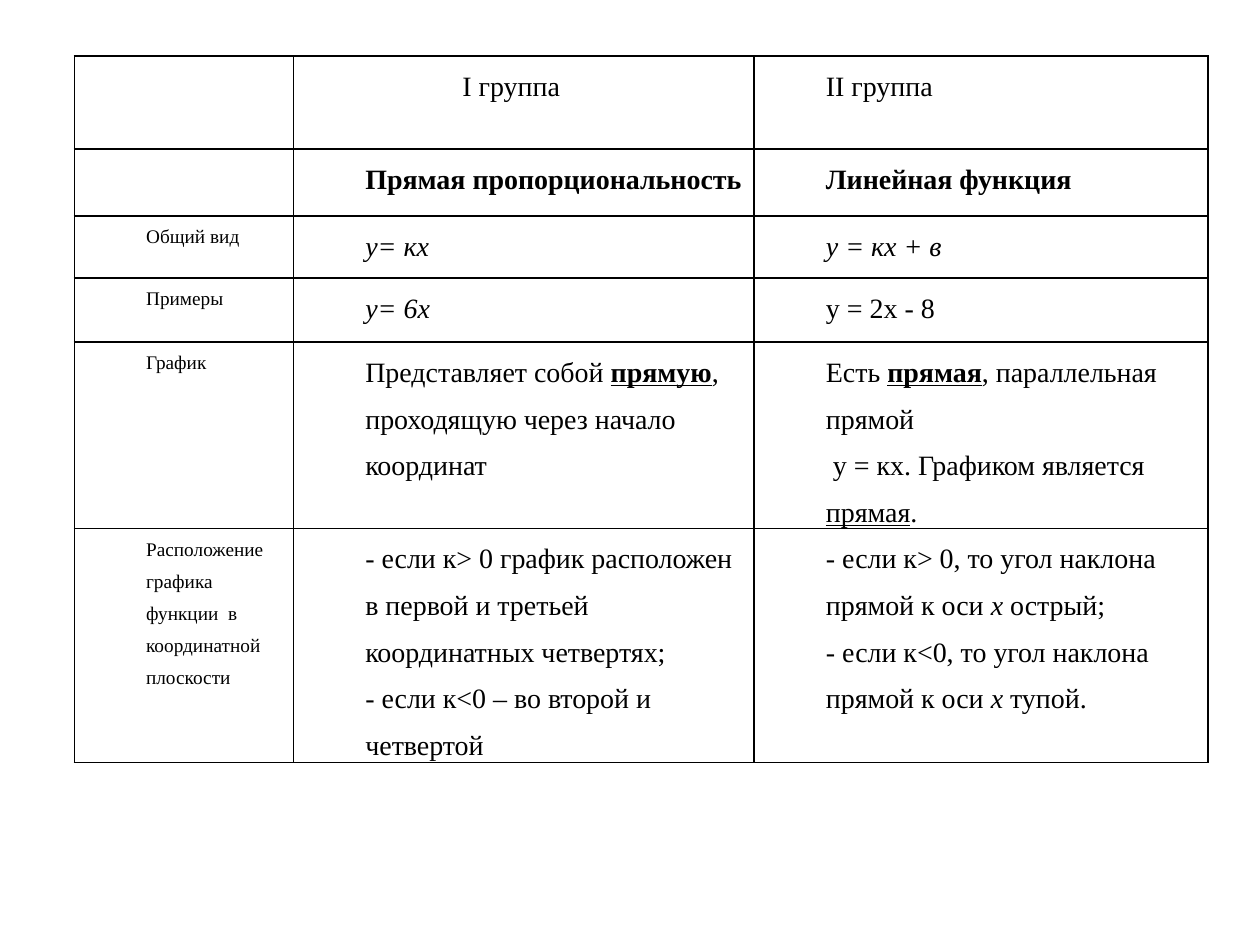
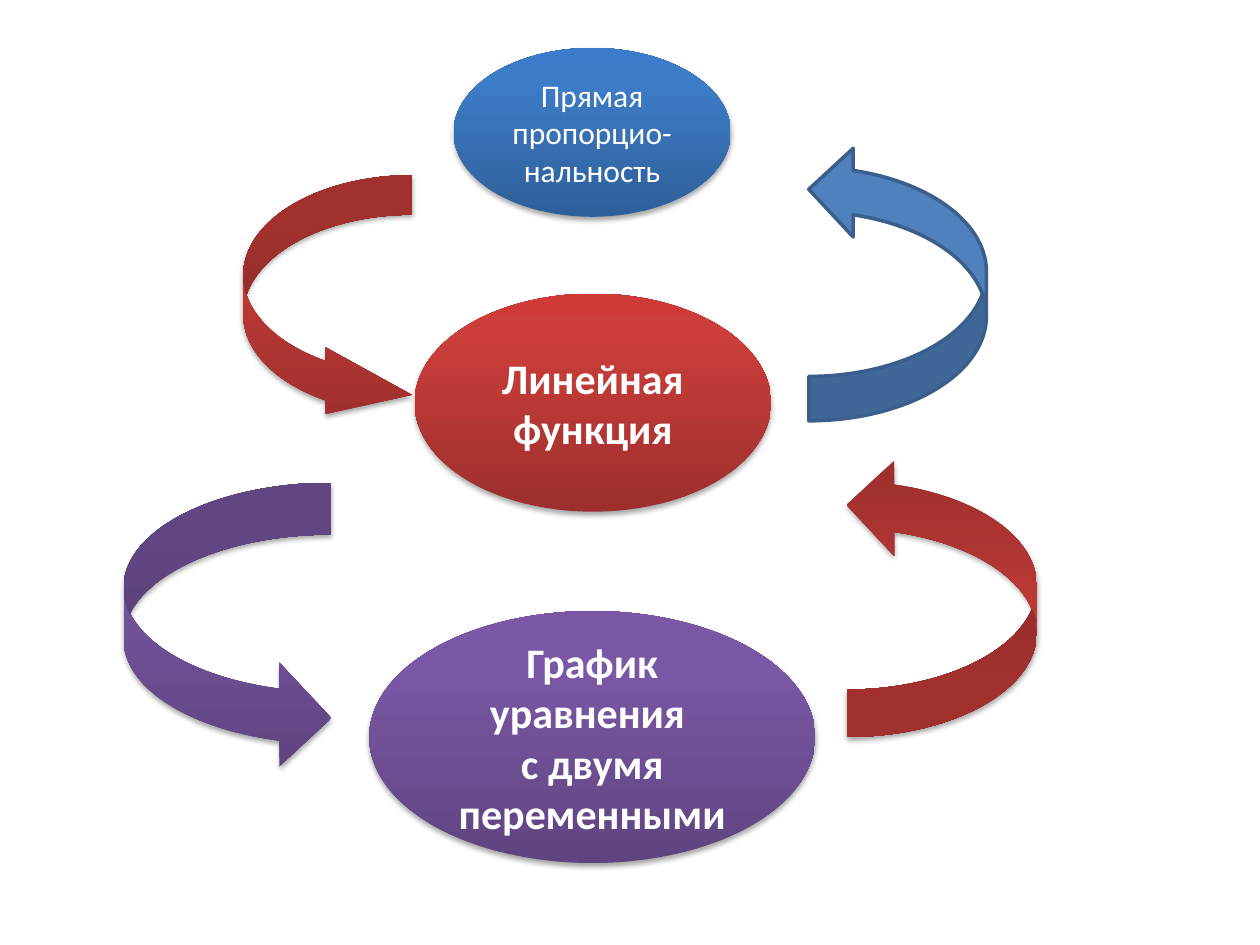
"""Build two slides: a comparison table of linear functions and a cycle of linked ovals."""
from copy import deepcopy

from lxml import etree
from pptx import Presentation
from pptx.dml.color import RGBColor
from pptx.enum.shapes import MSO_SHAPE
from pptx.enum.text import MSO_ANCHOR, PP_ALIGN
from pptx.oxml import parse_xml
from pptx.oxml.ns import nsdecls, qn
from pptx.util import Pt

OVAL = MSO_SHAPE.OVAL
ARROW = MSO_SHAPE.CURVED_RIGHT_ARROW
LEFT, CENTER = PP_ALIGN.LEFT, PP_ALIGN.CENTER
MIDDLE = MSO_ANCHOR.MIDDLE

COLORS = {"black": "000000", "white": "FFFFFF", "flat": "4F81BD", "outline": "3A5F8C"}
GRADIENTS = {
    "blue": ("2F5F99", "3D7CC7", "3A7CCB"),
    "red": ("9C2F2D", "CB3E3A", "CE3B37"),
    "purple": ("5F4480", "7B58A6", "7C57A8"),
}
STOPS = (0, 0.8, 1)


def write(tf, paragraphs, size, font, color, align=LEFT, spacing=None, indent=0, style=""):
    """Fill a frame; a paragraph is a string or a list of (text, style letters b, i, u)."""
    tf.word_wrap = True
    for n, runs in enumerate(paragraphs):
        p = tf.add_paragraph() if n else tf.paragraphs[0]
        p.alignment = align
        p.line_spacing = spacing
        if indent:
            p._p.get_or_add_pPr().set("marL", str(Pt(indent)))
            p._p.get_or_add_pPr().set("indent", "0")
        for text, letters in [(runs, style)] if isinstance(runs, str) else runs:
            r = p.add_run()
            r.text = text
            r.font.name, r.font.size = font, Pt(size)
            r.font.color.rgb = RGBColor.from_string(COLORS[color])
            r.font.bold = "b" in letters
            r.font.italic = "i" in letters
            r.font.underline = "u" in letters


def paint(s, color):
    """Give a shape a three-stop gradient and a soft shadow below it."""
    s.fill.gradient()
    s.fill.gradient_angle = 90
    stops = s._element.spPr.find(qn("a:gradFill")).find(qn("a:gsLst"))
    stops.append(deepcopy(stops[-1]))
    for stop, position, rgb in zip(s.fill.gradient_stops, STOPS, GRADIENTS[color]):
        stop.position = position
        stop.color.rgb = RGBColor.from_string(rgb)
    s.line.fill.background()
    effects = s._element.spPr.find(qn("a:effectLst"))
    shadow = etree.SubElement(effects, qn("a:outerShdw"), blurRad=str(Pt(3.1)),
                              dist=str(Pt(1.8)), dir="5400000", rotWithShape="0")
    rgb = etree.SubElement(shadow, qn("a:srgbClr"), val=COLORS["black"])
    etree.SubElement(rgb, qn("a:alpha"), val="35000")


prs = Presentation()
prs.slide_width, prs.slide_height = Pt(720), Pt(540)
blank = prs.slide_layouts[6]

slide = prs.slides.add_slide(blank)
col_widths = (125.3, 263.2, 259.2)
row_heights = (53.1, 38.3, 35.4, 36.6, 106.3, 133.7)
rows = [
    ([], ["I группа"], ["II группа"]),
    ([], [[("Прямая пропорциональность", "b")]], [[("Линейная функция", "b")]]),
    (["Общий вид"], [[("у= кх", "i")]], [[("у = кх + в", "i")]]),
    (["Примеры"], [[("у= 6х", "i")]], ["у = 2х - 8"]),
    (["График"],
     [[("Представляет собой ", ""), ("прямую", "bu"),
       (", проходящую через начало координат", "")]],
     [[("Есть ", ""), ("прямая", "bu"), (", параллельная прямой", "")],
      [(" у = кх. Графиком является ", ""), ("прямая", "u"), (".", "")]]),
    (["Расположение графика функции  в координатной плоскости"],
     ["- если к> 0 график расположен в первой и третьей координатных четвертях;",
      "- если к<0 – во второй и четвертой"],
     [[("- если к> 0, то угол наклона прямой к оси ", ""), ("х", "i"), (" острый;", "")],
      [("- если к<0, то угол наклона прямой к оси ", ""), ("х", "i"), (" тупой.", "")]]),
]

table = slide.shapes.add_table(len(rows), len(col_widths), Pt(42.5), Pt(32),
                               Pt(sum(col_widths)), Pt(sum(row_heights))).table
table.first_row = table.horz_banding = False
for column, width in zip(table.columns, col_widths):
    column.width = Pt(width)
for i, (row, height) in enumerate(zip(rows, row_heights)):
    table.rows[i].height = Pt(height)
    for j, paragraphs in enumerate(row):
        cell = table.cell(i, j)
        cell.margin_left = cell.margin_right = Pt(5)
        cell.margin_top = cell.margin_bottom = 0
        cell.fill.background()
        for n, side in enumerate("LRTB"):
            cell._tc.get_or_add_tcPr().insert(n, parse_xml(
                f'<a:ln{side} {nsdecls("a")} w="{Pt(1)}"><a:solidFill>'
                f'<a:srgbClr val="{COLORS["black"]}"/></a:solidFill></a:ln{side}>'))
        write(cell.text_frame, paragraphs, 16 if j else 11, "Times New Roman", "black",
              spacing=1.5, indent=91.5 if (i, j) == (0, 1) else 36)

slide = prs.slides.add_slide(blank)
ovals = [
    ("blue", 259.2, 27.4, 158.4, 96.5, ["Прямая пропорцио-нальность"], 18, ""),
    ("red", 236.9, 167.8, 203.8, 124.6, ["Линейная функция"], 24, "b"),
    ("purple", 211, 349.2, 254.9, 144, ["График уравнения ", "с двумя переменными"], 24, "b"),
]
for color, x, y, w, h, paragraphs, size, style in ovals:
    s = slide.shapes.add_shape(OVAL, Pt(x), Pt(y), Pt(w), Pt(h))
    s.shadow.inherit = False
    paint(s, color)
    s.text_frame.vertical_anchor = MIDDLE
    write(s.text_frame, paragraphs, size, "Calibri", "white", align=CENTER, style=style)

arrows = [
    ("red", 139, 100.1, 96.5, 144.7, False, (0.235, 0.397, 0.514)),
    ("red", 483.8, 261.4, 108.7, 159.8, True, ()),
    ("flat", 462.2, 82.8, 101.5, 157.7, True, ()),
    ("purple", 70.6, 275.8, 118.8, 164.2, False, ()),
]
for color, x, y, w, h, flipped, adjustments in arrows:
    s = slide.shapes.add_shape(ARROW, Pt(x), Pt(y), Pt(w), Pt(h))
    s.shadow.inherit = False
    for n, value in enumerate(adjustments):
        s.adjustments[n] = value
    if flipped:
        for flip in ("flipH", "flipV"):
            s._element.spPr.get_or_add_xfrm().set(flip, "1")
    if color in GRADIENTS:
        paint(s, color)
    else:
        s.fill.solid()
        s.fill.fore_color.rgb = RGBColor.from_string(COLORS[color])
        s.line.color.rgb = RGBColor.from_string(COLORS["outline"])
        s.line.width = Pt(2)

prs.save("out.pptx")
